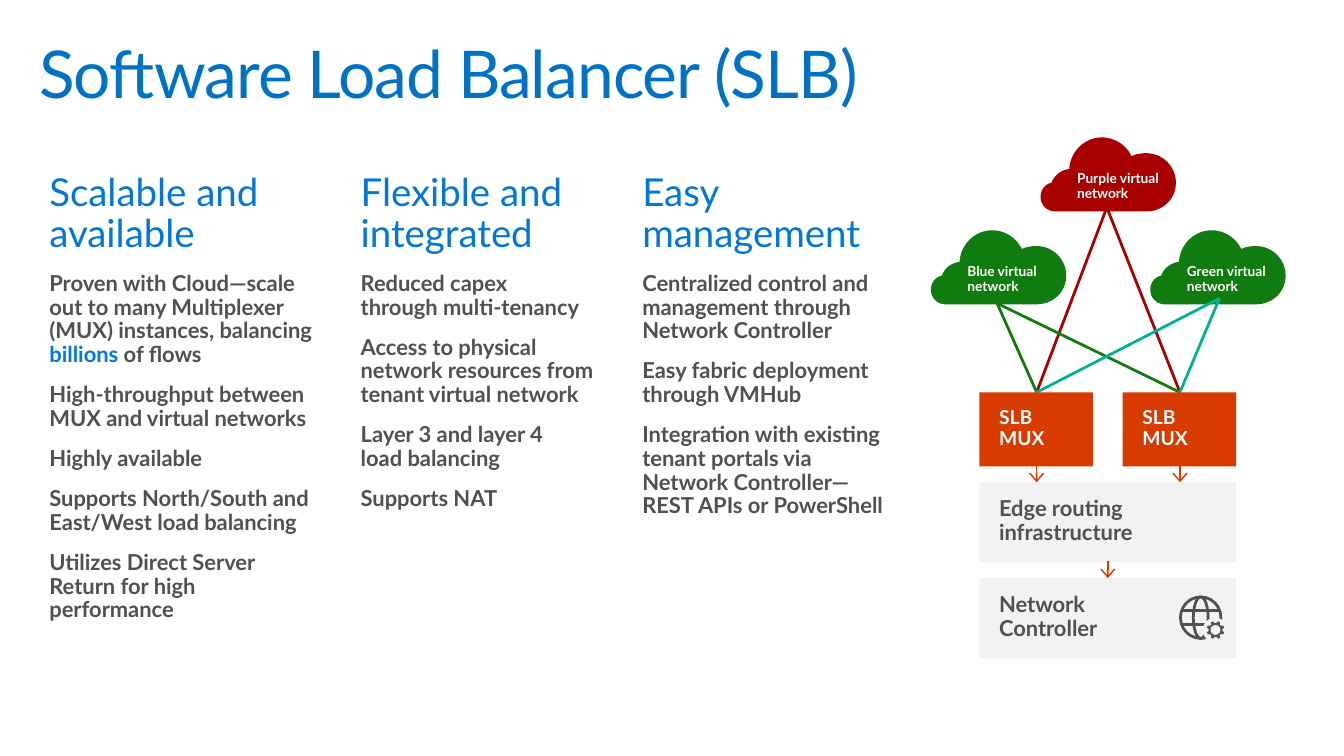
import math

import pptx
import pptx.dml.color
import pptx.enum.shapes
import pptx.enum.text
import pptx.oxml
import pptx.oxml.ns
import pptx.util

Inches = pptx.util.Inches
Pt = pptx.util.Pt
SHAPE = pptx.enum.shapes.MSO_SHAPE

BLUE, TITLE_BLUE, GRAY, PALE = "0377D6", "0072C6", "505050", "F2F2F2"
RED, GREEN, TEAL, ORANGE, WHITE = "A80000", "107C10", "00B294", "D83B01", "FFFFFF"

COLUMNS = [
    (0.3, 3, 4.67, "Scalable and available", [
        ("Proven with Cloud—scale out to many Multiplexer (MUX) instances, balancing ",
         "billions ", "of flows"),
        "High-throughput between MUX and virtual networks",
        "Highly available",
        "Supports North/South and East/West load balancing",
        "Utilizes Direct Server Return for high performance"]),
    (3.45, 2.7, 3.78, "Flexible and integrated", [
        "Reduced capex \nthrough multi-tenancy",
        "Access to physical \nnetwork resources from tenant virtual network",
        "Layer 3 and layer 4 \nload balancing",
        "Supports NAT"]),
    (6.3, 3, 3.85, "Easy management", [
        "Centralized control and management through Network Controller",
        "Easy fabric deployment through VMHub",
        "Integration with existing tenant portals via \n"
        "Network Controller—\nREST APIs or PowerShell"]),
]

# Cloud outline: a start point, then cubic curves (two controls and an end)
CLOUD_START = (1.07, 0.75)
CLOUD_CURVES = [
    ((0.15, 0.75), (0.15, 0.75), (0.15, 0.75)),
    ((0.07, 0.75), (0, 0.69), (0, 0.6)),
    ((0, 0.53), (0.05, 0.47), (0.11, 0.46)),
    ((0.14, 0.38), (0.21, 0.33), (0.29, 0.32)),
    ((0.3, 0.14), (0.45, 0), (0.62, 0)),
    ((0.75, 0), (0.87, 0.08), (0.92, 0.19)),
    ((0.96, 0.17), (1.02, 0.16), (1.07, 0.16)),
    ((1.23, 0.16), (1.37, 0.29), (1.37, 0.46)),
    ((1.37, 0.63), (1.23, 0.75), (1.07, 0.75)),
]


def rgb(color):
    return pptx.dml.color.RGBColor.from_string(color)


def paint(s, fill=None, line=None, width=1):
    s.shadow.inherit = False
    if fill:
        s.fill.solid()
        s.fill.fore_color.rgb = rgb(fill)
    else:
        s.fill.background()
    if line:
        s.line.color.rgb = rgb(line)
        s.line.width = Pt(width)
    else:
        s.line.fill.background()
    return s


def add_shape(slide, kind, x, y, w, h, **look):
    s = slide.shapes.add_shape(kind, Inches(x), Inches(y), Inches(w), Inches(h))
    return paint(s, **look)


def add_polygon(slide, points, fill):
    corners = [(Inches(x), Inches(y)) for x, y in points]
    builder = slide.shapes.build_freeform(*corners[0])
    builder.add_line_segments(corners[1:], close=True)
    return paint(builder.convert_to_shape(), fill=fill)


def add_line(slide, start, end, color, width=2, arrow=False):
    s = slide.shapes.add_connector(pptx.enum.shapes.MSO_CONNECTOR.STRAIGHT,
                                   *map(Inches, start + end))
    s.line.color.rgb = rgb(color)
    s.line.width = Pt(width)
    ns = pptx.oxml.ns.nsdecls("a")
    if arrow:
        s.line._get_or_add_ln().append(
            pptx.oxml.parse_xml(f'<a:tailEnd {ns} type="arrow" w="lg" len="med"/>'))
    s._element.spPr.append(pptx.oxml.parse_xml(f"<a:effectLst {ns}/>"))


def add_text(tf, text, size=16, color=GRAY, bold=True, before=0, accent=BLUE, spacing=None):
    """Append a paragraph; in a tuple of texts, every second one takes the accent."""
    p = tf.paragraphs[0] if not tf.text else tf.add_paragraph()
    p.alignment = pptx.enum.text.PP_ALIGN.LEFT
    p.line_spacing = 0.9
    p.space_before = Pt(before)
    for i, part in enumerate((text,) if isinstance(text, str) else text):
        for j, row in enumerate(part.split("\n")):
            if j:
                p.add_line_break()
            r = p.add_run()
            r.text = row
            r.font.name = "Lato"
            r.font.size = Pt(size)
            r.font.bold = bold
            r.font.color.rgb = rgb(accent if i % 2 else color)
            if spacing is not None:
                r._r.get_or_add_rPr().set("spc", str(spacing))


def frame(s, left=0, top=0, right=0):
    """Prepare a shape's text frame, with equal top and bottom insets."""
    tf = s.text_frame
    tf.word_wrap = True
    tf.vertical_anchor = pptx.enum.text.MSO_ANCHOR.TOP
    tf.margin_left, tf.margin_right = Inches(left), Inches(right)
    tf.margin_top = tf.margin_bottom = Inches(top)
    return tf


def text_box(slide, x, y, w, h, *insets):
    return frame(slide.shapes.add_textbox(Inches(x), Inches(y), Inches(w), Inches(h)), *insets)


def add_column(slide, x, y, w, h, heading, items):
    tf = text_box(slide, x, y, w, h, 0.2, 0.16, 0.1)
    add_text(tf, heading, size=28, color=BLUE, bold=False, before=12)
    for item in items:
        add_text(tf, item, before=12)


def add_box(slide, x, y, w, h, text, fill, **fmt):
    s = add_shape(slide, SHAPE.RECTANGLE, x, y, w, h, fill=fill)
    tf = frame(s, 0.2, 0.16, 0.2)
    for row in text.split("\n"):
        add_text(tf, row, **fmt)


def add_cloud(slide, x, y, color):
    points, start = [CLOUD_START], CLOUD_START
    for c1, c2, end in CLOUD_CURVES:
        for step in range(1, 13):
            t = step / 12
            weights = ((1 - t) ** 3, 3 * t * (1 - t) ** 2, 3 * t * t * (1 - t), t ** 3)
            points.append(tuple(sum(k * q[axis] for k, q in zip(weights, (start, c1, c2, end)))
                                for axis in (0, 1)))
        start = end
    add_polygon(slide, [(x + px, y + py) for px, py in points], color)


def add_globe(slide, x, y):
    """Globe with a small gear at its lower right, in a 0.44 inch square."""
    for w in (0.41, 0.15):
        add_shape(slide, SHAPE.OVAL, x + 0.22 - w / 2, y + 0.01, w, 0.42, line=GRAY, width=2)
    for row in (0.15, 0.29):
        add_line(slide, (x + 0.03, y + row), (x + 0.41, y + row), GRAY)
    add_shape(slide, SHAPE.OVAL, x + 0.24, y + 0.22, 0.25, 0.25, fill=PALE)
    cx, cy = x + 0.37, y + 0.345
    teeth = []
    for i in range(8):
        for turn, radius in ((-14, 0.07), (-8, 0.09), (8, 0.09), (14, 0.07)):
            a = math.radians(22.5 + 45 * i + turn)
            teeth.append((cx + radius * math.cos(a), cy + radius * math.sin(a)))
    add_polygon(slide, teeth, GRAY)
    add_shape(slide, SHAPE.OVAL, cx - 0.05, cy - 0.05, 0.1, 0.1, fill=PALE)


def add_network_diagram(slide, x, y):
    clouds = [(1.11, 0, "Purple virtual network", RED),
              (0, 0.94, "Blue virtual network", GREEN),
              (2.22, 0.94, "Green virtual \nnetwork", GREEN)]
    for dx, dy, label, color in clouds:
        add_cloud(slide, x + dx, y + dy, color)

    mux_y, edge_y, controller_y = y + 2.58, y + 3.49, y + 4.46
    mux_x = (x + 0.49, x + 1.94)
    centers = (x + 1.07, x + 2.52)
    for (dx, dy), color in (((1.78, 0.71), RED), ((0.67, 1.68), GREEN), ((2.92, 1.63), TEAL)):
        for center in centers:
            add_line(slide, (x + dx, y + dy), (center, mux_y), color)
    for dx, dy, label, color in clouds:
        tf = text_box(slide, x + dx + 0.37, y + dy + 0.35, 0.9, 0.3)
        add_text(tf, label, size=10, color=WHITE)

    for left in mux_x:
        add_box(slide, left, mux_y, 1.15, 0.75, "SLB MUX", ORANGE, size=14, color=WHITE)
    add_box(slide, mux_x[0], edge_y, 2.6, 0.81, "Edge routing infrastructure", PALE)
    add_box(slide, mux_x[0], controller_y, 2.6, 0.81, "Network\nController", PALE)
    for center, bottom in ((centers[0], edge_y), (centers[1], edge_y), (x + 1.79, controller_y)):
        add_line(slide, (center, bottom - 0.17), (center, bottom), ORANGE, 1.25, arrow=True)
    add_globe(slide, x + 2.51, controller_y + 0.18)


def main():
    prs = pptx.Presentation()
    prs.slide_width, prs.slide_height = Inches(13.6), Inches(7.65)
    slide = prs.slides.add_slide(prs.slide_layouts[6])
    title = text_box(slide, 0.3, 0.32, 13, 1, 0.1, 0.1, 0.1)
    add_text(title, "Software Load Balancer (SLB)", size=48, color=TITLE_BLUE,
             bold=False, spacing=-70)
    for x, w, h, heading, items in COLUMNS:
        add_column(slide, x, 1.59, w, h, heading, items)
    add_network_diagram(slide, 9.42, 1.39)
    prs.save("out.pptx")


if __name__ == "__main__":
    main()
